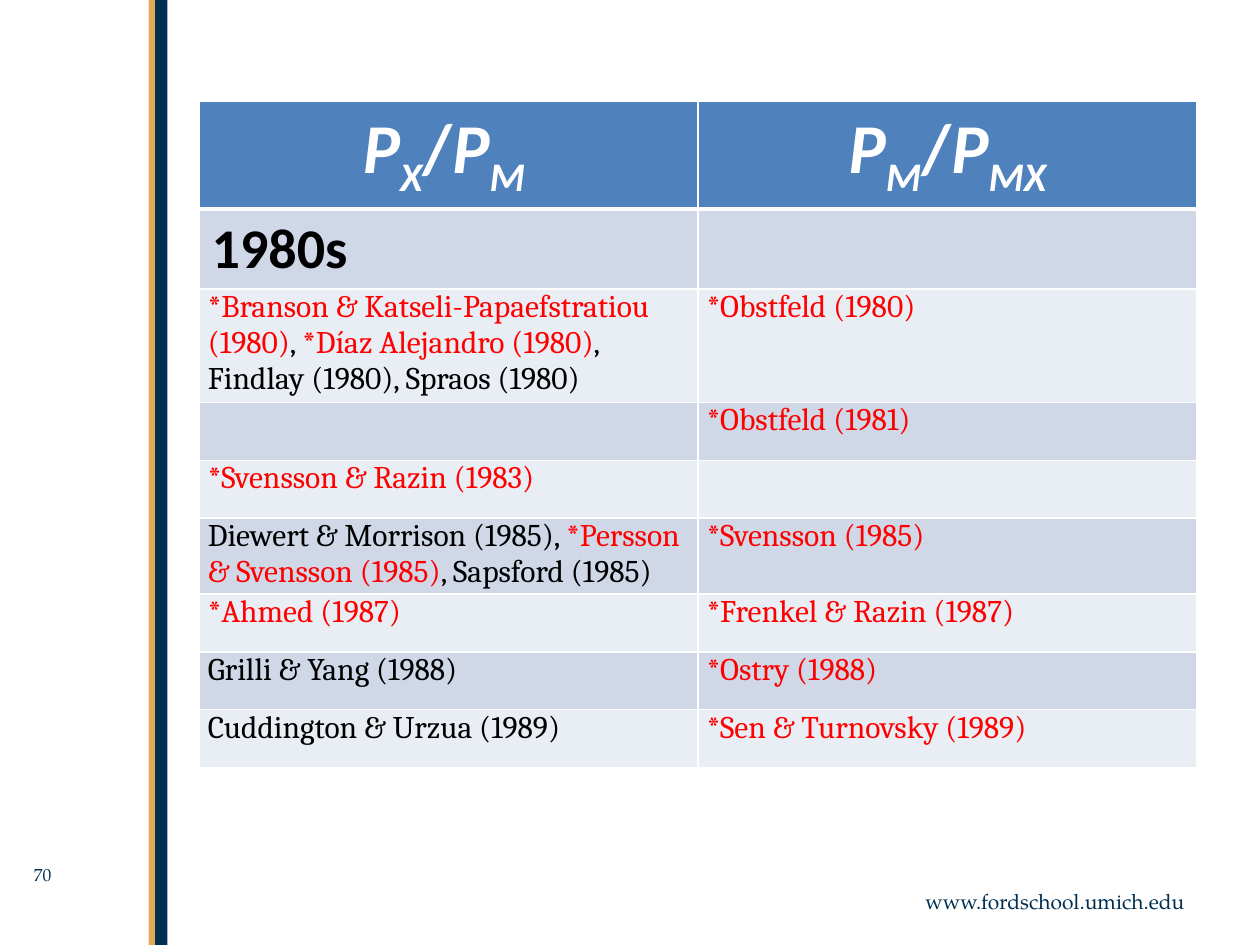
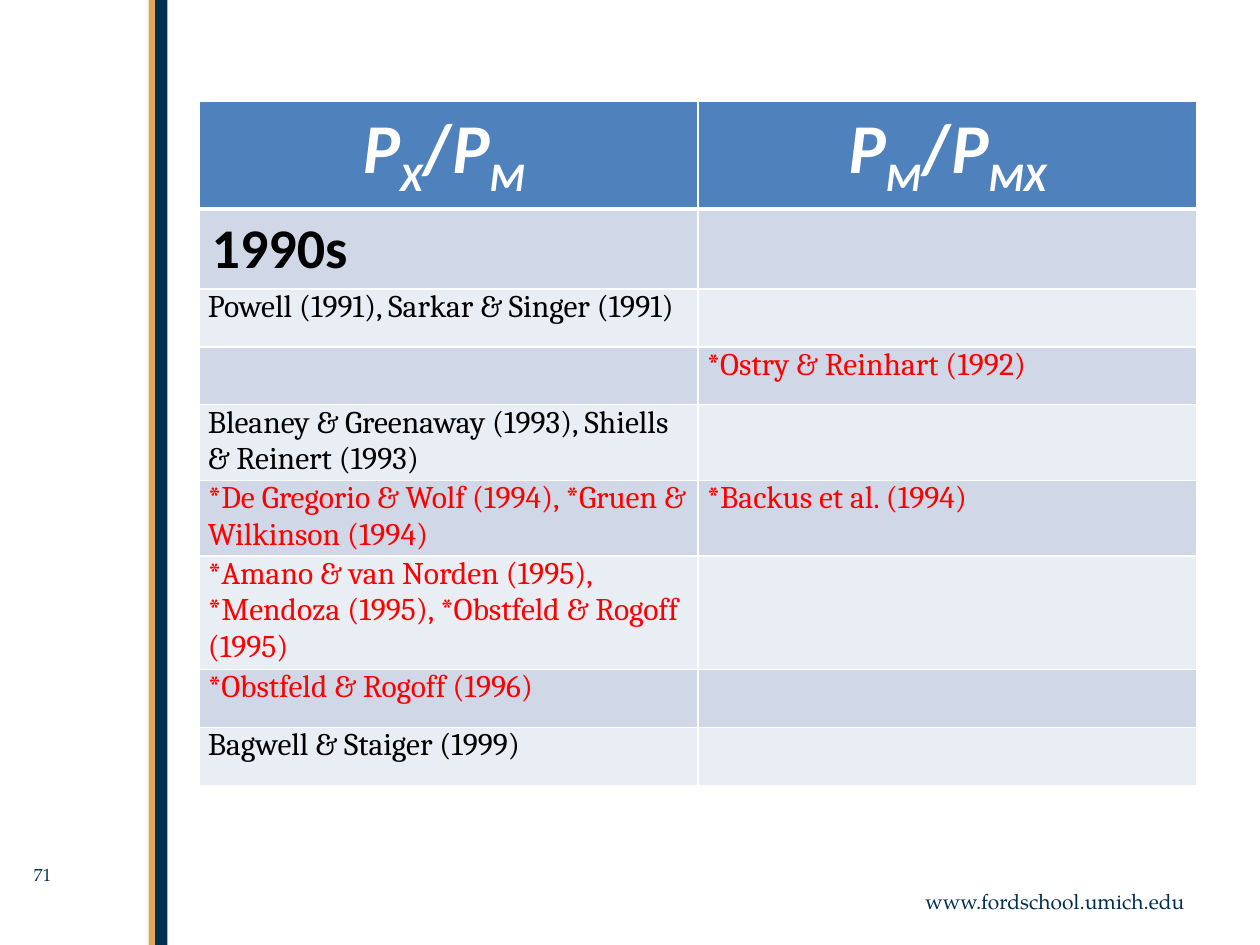
from dataclasses import dataclass
from typing import NamedTuple

from lxml import etree
from pptx import Presentation
from pptx import util as u
from pptx.dml.color import RGBColor
from pptx.enum import shapes, text
from pptx.oxml.ns import qn


@dataclass(frozen=True)
class Theme:
    navy: str = "002F52"
    gold: str = "E3A856"
    white: str = "FFFFFF"
    black: str = "000000"
    starred: str = "FF0000"
    header_fill: str = "4F81BD"
    row_fills: tuple[str, str] = ("D0D8E8", "E9EDF4")
    frame_font: str = "TeX Gyre Pagella"
    heading_font: str = "Calibri"
    citation_font: str = "Cambria"
    header_size: int = 40
    decade_size: int = 32
    citation_size: int = 18
    footer_size: int = 12
    page_size: int = 10


THEME = Theme()


class Band(NamedTuple):
    left: float
    width: float
    color: str


class Label(NamedTuple):
    wording: str
    box: tuple[float, float, float, float]
    size: int
    align: text.PP_ALIGN
    auto_size: text.MSO_AUTO_SIZE


class Decade(NamedTuple):
    page: int
    name: str
    table_height: float
    citations: list[tuple[str, str]]


BANDS = [Band(1.23, 0.1, THEME.navy), Band(1.18, 0.05, THEME.gold)]
FOOTER = Label("www.fordschool.umich.edu", (7, 7, 2.5, 0.3), THEME.footer_size,
               text.PP_ALIGN.RIGHT, text.MSO_AUTO_SIZE.SHAPE_TO_FIT_TEXT)

# Price ratios: every second piece is a subscript
RATIOS = [("P", "X", "/", "P", "M "), ("P", "M", "/", "P", "MX")]

# In a citation cell, the pieces between bars are starred works
DECADES = [
    Decade(70, "1980s", 5.49, [
        ("|*Branson & Katseli-Papaefstratiou (1980)|, |*Díaz Alejandro (1980)|"
         ", Findlay (1980), Spraos (1980)", "|*Obstfeld (1980)"),
        ("", "|*Obstfeld (1981)"),
        ("|*Svensson & Razin (1983)", ""),
        ("Diewert & Morrison (1985), |*Persson & Svensson (1985)|, Sapsford (1985)",
         "|*Svensson (1985)"),
        ("|*Ahmed (1987)", "|*Frenkel & Razin (1987)"),
        ("Grilli & Yang (1988)", "|*Ostry (1988)"),
        ("Cuddington & Urzua (1989)", "|*Sen & Turnovsky (1989)"),
    ]),
    Decade(71, "1990s", 5.47, [
        ("Powell (1991), Sarkar & Singer (1991)", ""),
        ("", "|*Ostry & Reinhart (1992)"),
        ("Bleaney & Greenaway (1993), Shiells & Reinert (1993)", ""),
        ("|*De Gregorio & Wolf (1994), *Gruen & Wilkinson (1994)",
         "|*Backus et al. (1994)"),
        ("|*Amano & van Norden (1995), *Mendoza (1995), *Obstfeld & Rogoff (1995)", ""),
        ("|*Obstfeld & Rogoff (1996)", ""),
        ("Bagwell & Staiger (1999)", ""),
    ]),
]


def rgb(color: str) -> RGBColor:
    return RGBColor.from_string(color)


def add_run(paragraph, wording: str, color: str, size: int, **formats):
    run = paragraph.add_run()
    run.text = wording
    for attribute, value in {"size": u.Pt(size), **formats}.items():
        setattr(run.font, attribute, value)
    run.font.color.rgb = rgb(color)
    return run


# Parts shared by all slides
def draw_band(slide, band: Band) -> None:
    bar = slide.shapes.add_shape(shapes.MSO_SHAPE.RECTANGLE, u.Inches(band.left), 0,
                                 u.Inches(band.width), u.Inches(7.5))
    bar.shadow.inherit = False
    bar.fill.solid()
    bar.fill.fore_color.rgb = rgb(band.color)
    bar.line.fill.background()


def draw_label(slide, label: Label) -> None:
    frame = slide.shapes.add_textbox(*map(u.Inches, label.box)).text_frame
    for attribute, value in {"word_wrap": True, "auto_size": label.auto_size}.items():
        setattr(frame, attribute, value)
    paragraph = frame.paragraphs[0]
    paragraph.alignment = label.align
    add_run(paragraph, label.wording, THEME.navy, label.size, name=THEME.frame_font)


# Table cells
def style_cell(cell, fill: str, top: int = 1, bottom: int = 1) -> None:
    properties = cell._tc.get_or_add_tcPr()
    for side, width in {"L": 1, "R": 1, "T": top, "B": bottom}.items():
        border = etree.SubElement(properties, qn(f"a:ln{side}"), w=str(u.Pt(width)))
        solid = etree.SubElement(border, qn("a:solidFill"))
        etree.SubElement(solid, qn("a:srgbClr"), val=THEME.white)
    cell.fill.solid()
    cell.fill.fore_color.rgb = rgb(fill)


def write_ratio(cell, pieces: tuple[str, ...]) -> None:
    paragraph = cell.text_frame.paragraphs[0]
    paragraph.alignment = text.PP_ALIGN.CENTER
    for index, piece in enumerate(pieces):
        run = add_run(paragraph, piece, THEME.white, THEME.header_size,
                      name=THEME.heading_font, bold=True, italic=piece != "/")
        if index in (1, 4):
            run._r.get_or_add_rPr().set("baseline", "-25000")


def write_citations(cell, citations: str) -> None:
    margins = {"margin_left": 0.07, "margin_right": 0.07,
               "margin_top": 0, "margin_bottom": 0}
    for attribute, value in margins.items():
        setattr(cell, attribute, u.Inches(value))
    for index, piece in enumerate(citations.split("|")):
        if piece:
            add_run(cell.text_frame.paragraphs[0], piece,
                    THEME.starred if index % 2 else THEME.black,
                    THEME.citation_size, name=THEME.citation_font, bold=False)


def draw_literature(slide, decade: Decade) -> None:
    height = u.Inches(decade.table_height)
    frame = slide.shapes.add_table(len(decade.citations) + 2, len(RATIOS), u.Inches(1.58),
                                   u.Inches(0.8), u.Inches(7.92), height)
    table = frame.table
    for index, row in enumerate(table.rows):
        row.height = u.Inches(0.46 if index else 0.52)
    frame.height = height

    # Header and decade rows
    for column, ratio in enumerate(RATIOS):
        style_cell(table.cell(0, column), THEME.header_fill, bottom=3)
        write_ratio(table.cell(0, column), ratio)
        style_cell(table.cell(1, column), THEME.row_fills[0], top=3)
    add_run(table.cell(1, 0).text_frame.paragraphs[0], decade.name, THEME.black,
            THEME.decade_size, name=THEME.heading_font, bold=True)

    # Citation rows
    for row_index, pair in enumerate(decade.citations, start=2):
        for column, citations in enumerate(pair):
            cell = table.cell(row_index, column)
            style_cell(cell, THEME.row_fills[(row_index - 1) % 2])
            if citations:
                write_citations(cell, citations)


def main() -> None:
    deck = Presentation()
    deck.slide_width, deck.slide_height = u.Inches(10), u.Inches(7.5)
    for decade in DECADES:
        slide = deck.slides.add_slide(deck.slide_layouts[6])
        for band in BANDS:
            draw_band(slide, band)
        draw_label(slide, FOOTER)
        draw_literature(slide, decade)
        draw_label(slide, Label(str(decade.page), (0.17, 6.81, 0.92, 0.34),
                                THEME.page_size, text.PP_ALIGN.LEFT,
                                text.MSO_AUTO_SIZE.NONE))
    deck.save("out.pptx")


if __name__ == "__main__":
    main()
